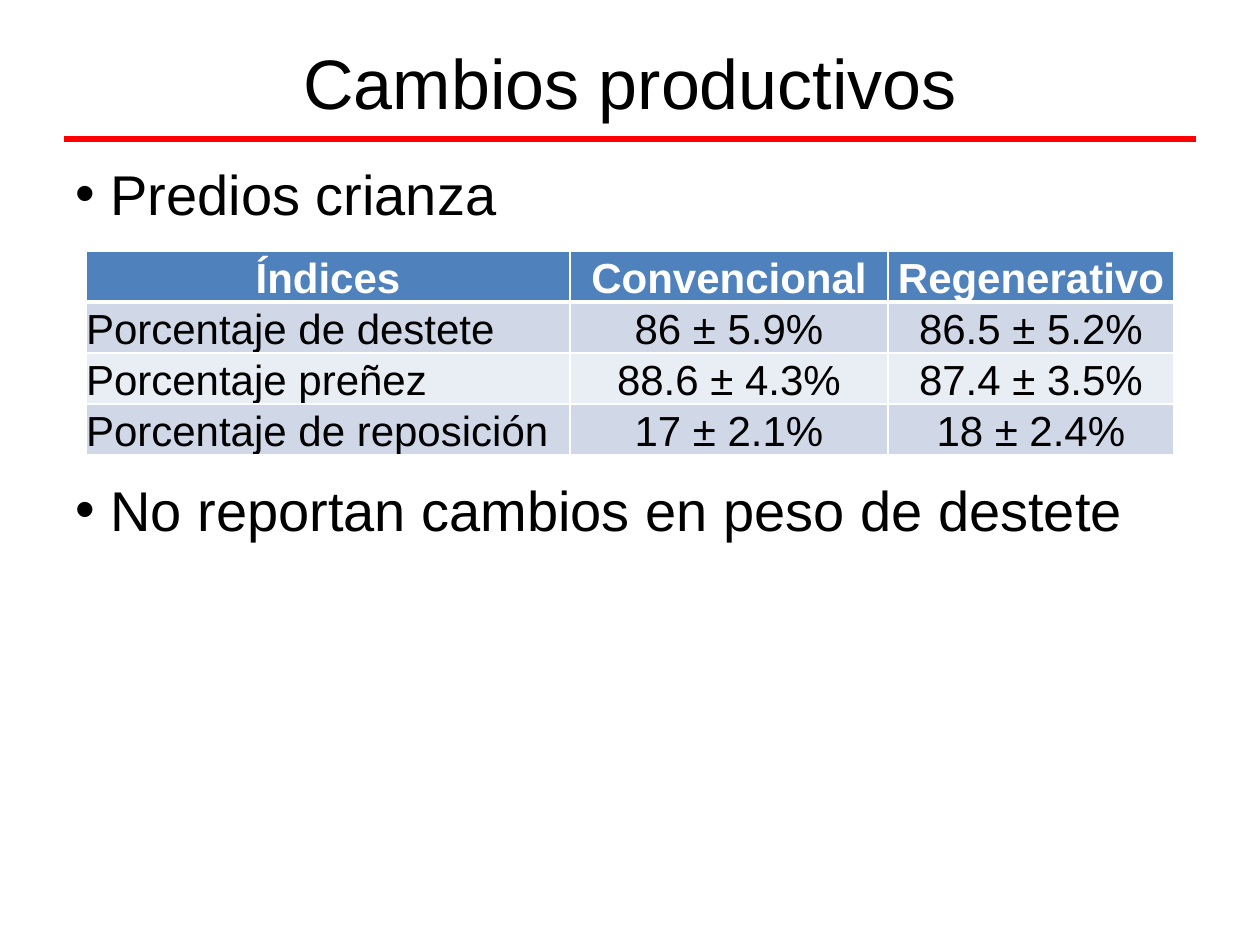
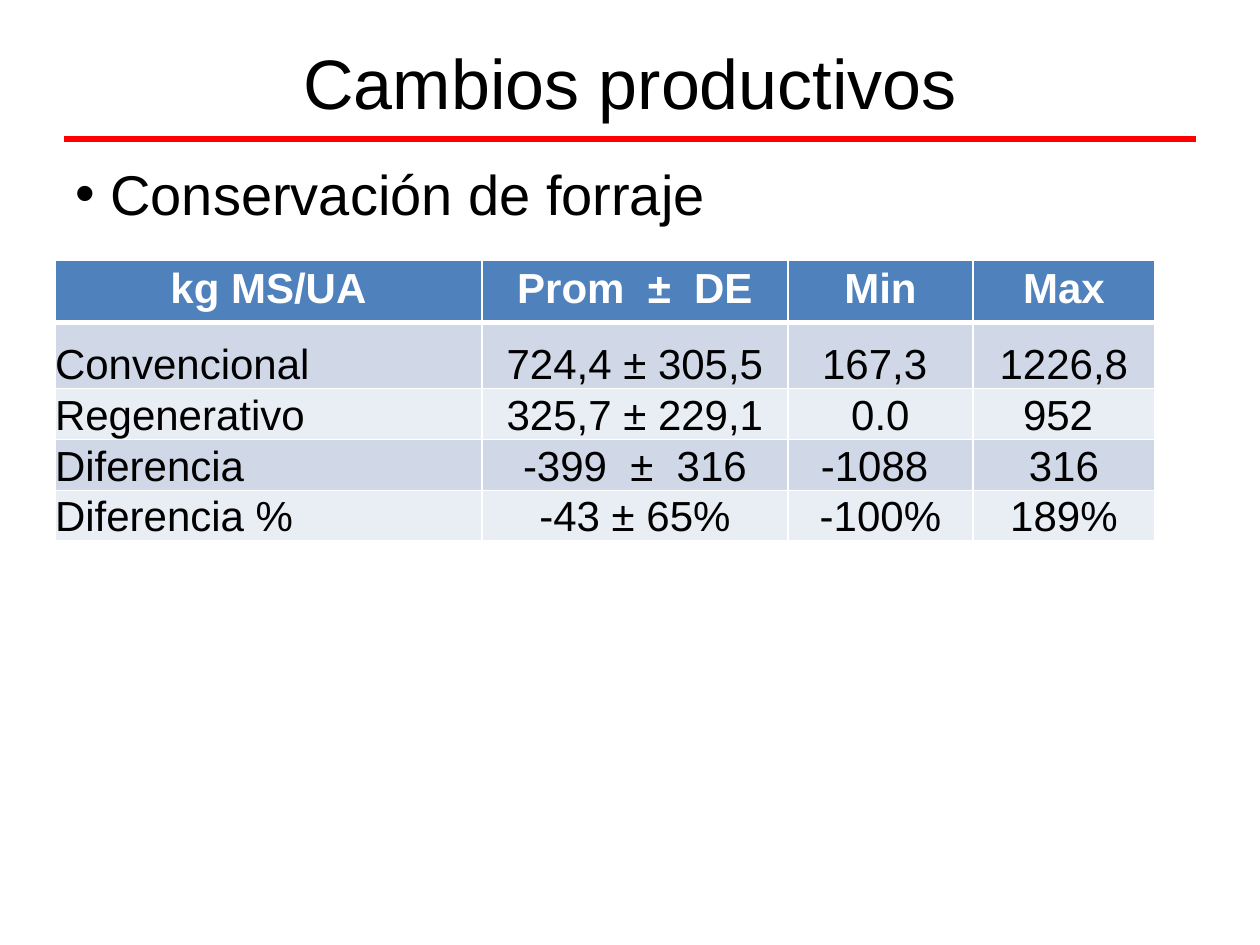
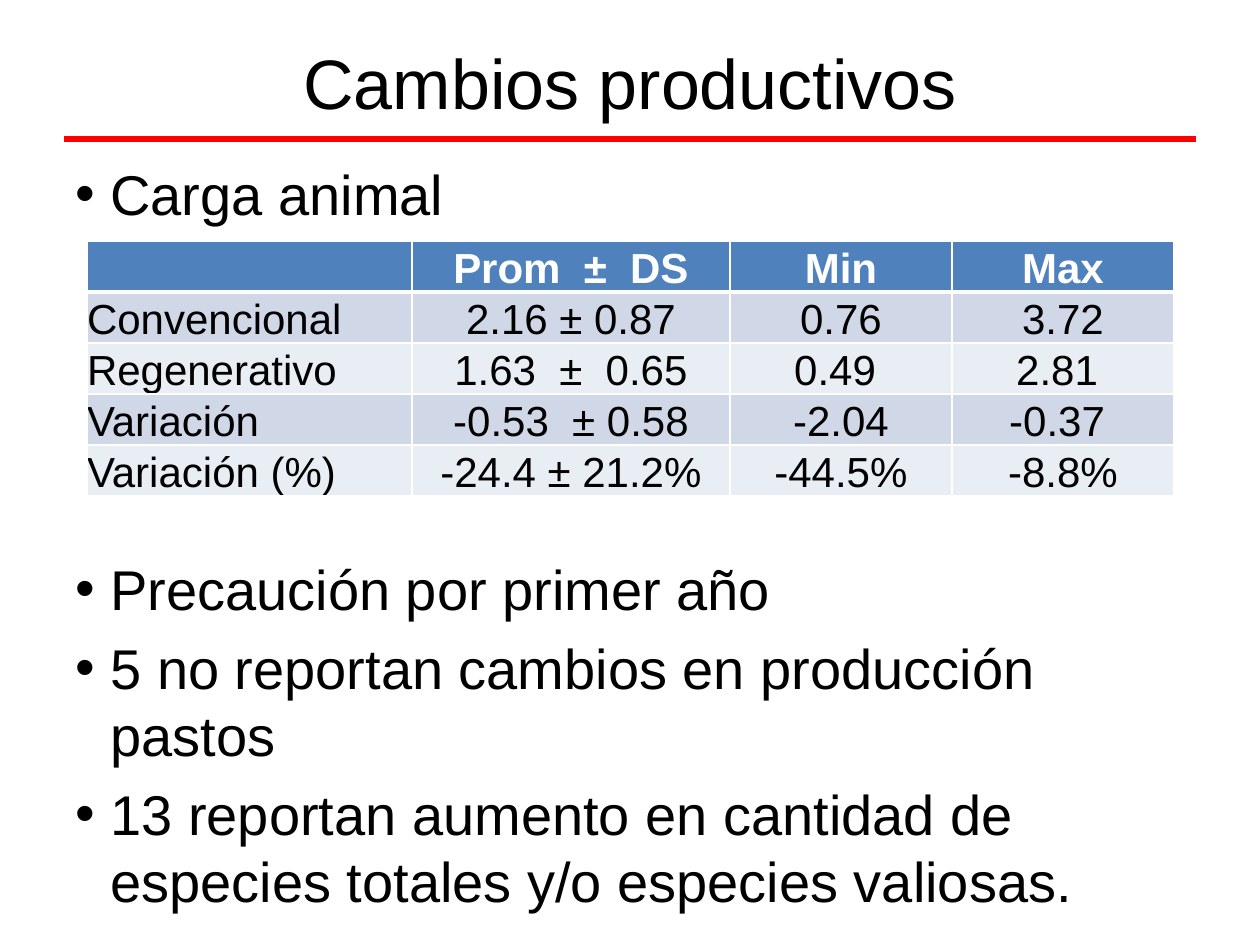
import pptx
import pptx.dml.color
import pptx.enum.shapes
import pptx.enum.text
import pptx.oxml
import pptx.oxml.ns
import pptx.util

TITLE = "Cambios productivos"
FONT = "Arial"
COLORS = {
    "text": "000000",
    "white": "FFFFFF",
    "rule": "FF0000",
    "header": "4F81BD",
    "odd_row": "D0D8E8",
    "even_row": "E9EDF4",
}
SLIDES = [
    {
        "topic": "Predios crianza",
        "skipped_lines": 3,
        "findings": ["No reportan cambios en peso de destete"],
        "corner": (86, 251),
        "columns": [484, 318, 286],
        "rows": [51] * 4,
        "header_pad": 0,
        "cells": [
            ("Índices", "Convencional", "Regenerativo"),
            ("Porcentaje de destete", "86 ± 5.9%", "86.5 ± 5.2%"),
            ("Porcentaje preñez", "88.6 ± 4.3%", "87.4 ± 3.5%"),
            ("Porcentaje de reposición", "17 ± 2.1%", "18 ± 2.4%"),
        ],
    },
    {
        "topic": "Conservación de forraje",
        "skipped_lines": 0,
        "findings": [],
        "corner": (55, 260),
        "columns": [427, 306, 185, 182],
        "rows": [59, 66, 51, 51, 46],
        "header_pad": 6,
        "cells": [
            ("kg MS/UA", "Prom  ±  DE", "Min", "Max"),
            ("Convencional", "724,4 ± 305,5", "167,3 ", "1226,8"),
            ("Regenerativo", "325,7 ± 229,1", "0.0", "952 "),
            ("Diferencia", "-399  ±  316", "-1088 ", "316"),
            ("Diferencia %", "-43 ± 65%", "-100%", "189%"),
        ],
    },
    {
        "topic": "Carga animal",
        "skipped_lines": 4,
        "findings": [
            "Precaución por primer año",
            "5 no reportan cambios en producción pastos",
            "13 reportan aumento en cantidad de especies totales y/o especies valiosas.",
        ],
        "corner": (87, 241),
        "columns": [325, 318, 222, 222],
        "rows": [51] * 5,
        "header_pad": 0,
        "cells": [
            ("", "Prom  ±  DS", "Min", "Max"),
            ("Convencional", "2.16 ± 0.87", "0.76", "3.72"),
            ("Regenerativo", "1.63  ±  0.65", "0.49 ", "2.81 "),
            ("Variación", "-0.53  ± 0.58", "-2.04", "-0.37 "),
            ("Variación (%)", "-24.4 ± 21.2%", "-44.5%", "-8.8%"),
        ],
    },
]
TITLE_BOX = (63, 38, 1134, 87)
BODY_BOX = (63, 154, 1134, 756)
RULE_LEFT, RULE_RIGHT, RULE_TOP = 64, 1196, 139
BULLET_INDENT, BULLET_LINE, BULLET_GAP = 35, 67, 12
PP_ALIGN = pptx.enum.text.PP_ALIGN
ANCHOR = pptx.enum.text.MSO_ANCHOR


def px(length):
    return pptx.util.Emu(round(length * 914400 / 126))


def rgb(name):
    return pptx.dml.color.RGBColor.from_string(COLORS[name])


def style(paragraph, size, color="text", bold=False):
    for run in paragraph.runs:
        run.font.name = FONT
        run.font.size = pptx.util.Pt(size)
        run.font.bold = bold
        run.font.color.rgb = rgb(color)


def append_xml(parent, xml):
    namespace = pptx.oxml.ns.nsdecls("a")
    parent.append(pptx.oxml.parse_xml(xml.replace("/>", f" {namespace}/>", 1)
                                      if xml.endswith("/>") and xml.count("<") == 1
                                      else xml.replace(">", f" {namespace}>", 1)))


def add_title(slide):
    title = slide.shapes.title
    title.left, title.top, title.width, title.height = map(px, TITLE_BOX)
    title.text_frame.text = TITLE
    title.text_frame.vertical_anchor = ANCHOR.MIDDLE
    title.text_frame.paragraphs[0].alignment = PP_ALIGN.CENTER
    style(title.text_frame.paragraphs[0], 40)


def add_rule(slide):
    rule = slide.shapes.add_connector(
        pptx.enum.shapes.MSO_CONNECTOR.STRAIGHT,
        px(RULE_LEFT), px(RULE_TOP), px(RULE_RIGHT), px(RULE_TOP))
    rule.line.color.rgb = rgb("rule")
    rule.line.width = pptx.util.Pt(3)
    append_xml(rule._element.spPr, "<a:effectLst/>")


def add_bullets(slide, content):
    frame = slide.shapes.add_textbox(*map(px, BODY_BOX)).text_frame
    frame.word_wrap = True
    frame.text = "\n".join([content["topic"], *content["findings"]])
    for index, bullet in enumerate(frame.paragraphs):
        skipped = content["skipped_lines"] if index == 1 else 0
        if index:
            bullet.space_before = px(BULLET_GAP + skipped * (BULLET_LINE + BULLET_GAP))
        bullet.line_spacing = px(BULLET_LINE)
        style(bullet, 32)
        properties = bullet._p.get_or_add_pPr()
        properties.set("marL", str(px(BULLET_INDENT)))
        properties.set("indent", str(-px(BULLET_INDENT)))
        append_xml(properties, '<a:buFont typeface="Arial"/>')
        append_xml(properties, '<a:buChar char="•"/>')


def add_borders(cell, row):
    widths = {"L": 1, "R": 1, "T": 3 if row == 1 else 1, "B": 3 if row == 0 else 1}
    for side, width in widths.items():
        append_xml(
            cell._tc.get_or_add_tcPr(),
            f'<a:ln{side} w="{pptx.util.Pt(width)}"><a:solidFill>'
            f'<a:srgbClr val="{COLORS["white"]}"/></a:solidFill></a:ln{side}>')


def format_cell(cell, row, column, header_pad):
    is_header = row == 0
    padding = header_pad if is_header else 0
    cell.margin_left = cell.margin_right = 0
    cell.margin_top = cell.margin_bottom = px(padding)
    cell.vertical_anchor = ANCHOR.TOP if padding else ANCHOR.BOTTOM
    add_borders(cell, row)
    cell.fill.solid()
    band = "header" if is_header else "odd_row" if row % 2 else "even_row"
    cell.fill.fore_color.rgb = rgb(band)
    label = cell.text_frame.paragraphs[0]
    label.alignment = PP_ALIGN.CENTER if is_header or column else PP_ALIGN.LEFT
    style(label, 24, "white" if is_header else "text", is_header)


def add_indices(slide, content):
    columns, rows = content["columns"], content["rows"]
    box = (*content["corner"], sum(columns), sum(rows))
    table = slide.shapes.add_table(len(rows), len(columns), *map(px, box)).table
    for column, width in zip(table.columns, columns):
        column.width = px(width)
    for row, height in zip(table.rows, rows):
        row.height = px(height)
    for row, texts in enumerate(content["cells"]):
        for column, text in enumerate(texts):
            cell = table.cell(row, column)
            cell.text_frame.text = text
            format_cell(cell, row, column, content["header_pad"])


def main():
    deck = pptx.Presentation()
    deck.slide_width, deck.slide_height = px(1260), px(945)
    for content in SLIDES:
        slide = deck.slides.add_slide(deck.slide_layouts[5])
        add_rule(slide)
        add_title(slide)
        add_bullets(slide, content)
        add_indices(slide, content)
    deck.save("out.pptx")


if __name__ == "__main__":
    main()
